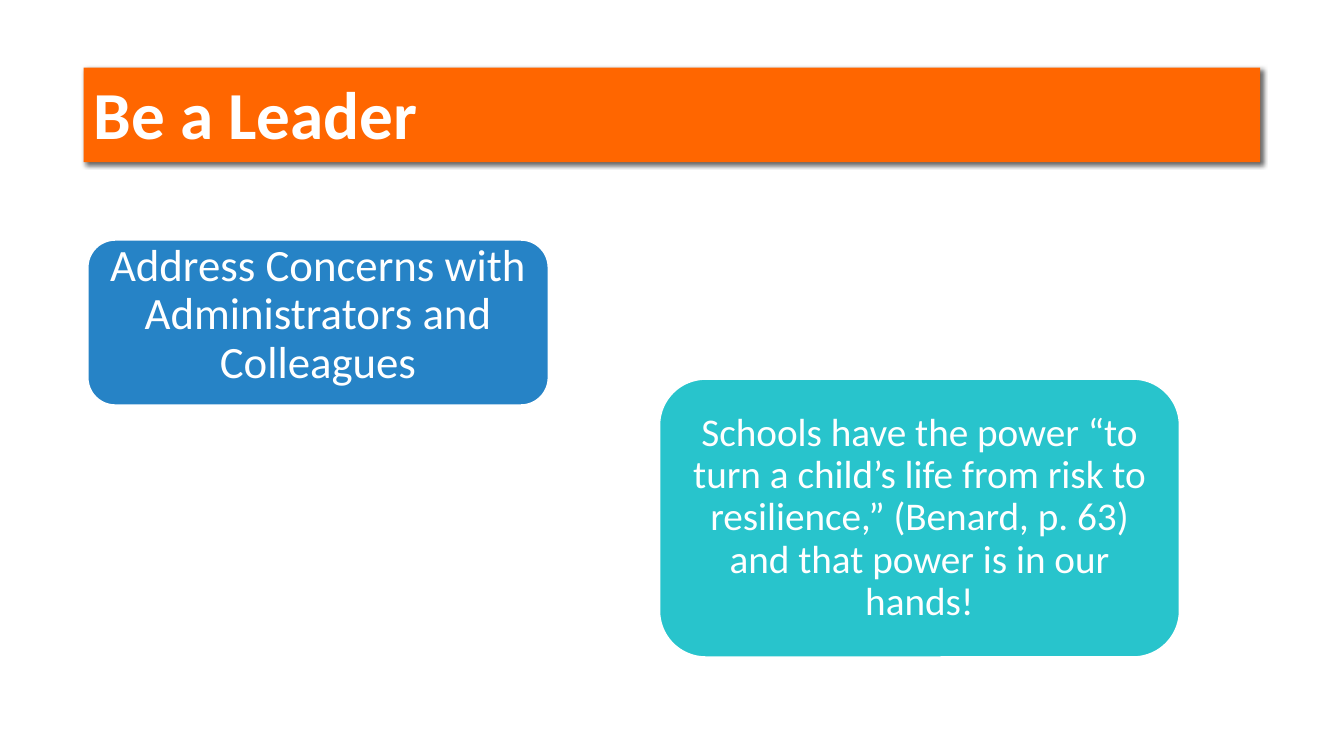
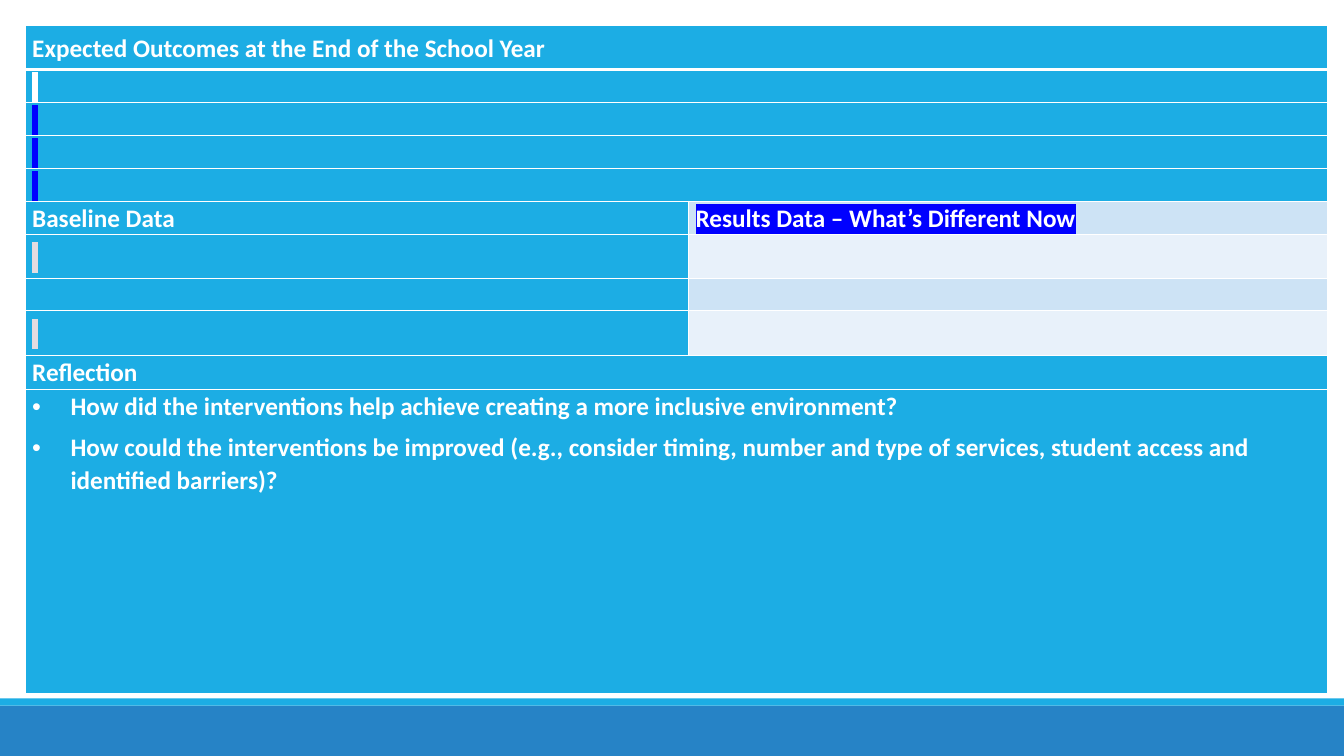
from lxml import etree
from pptx import Presentation
from pptx.dml.color import RGBColor
from pptx.enum.shapes import MSO_SHAPE
from pptx.enum.text import MSO_ANCHOR, PP_ALIGN
from pptx.oxml import parse_xml
from pptx.oxml.ns import qn
from pptx.util import Pt

RECT, ROUND = MSO_SHAPE.RECTANGLE, MSO_SHAPE.ROUNDED_RECTANGLE
LEFT, MID = PP_ALIGN.LEFT, PP_ALIGN.CENTER
TOP, MIDDLE = MSO_ANCHOR.TOP, MSO_ANCHOR.MIDDLE
PX = 9144
NS = 'xmlns:a="http://schemas.openxmlformats.org/drawingml/2006/main"'
HEX = {
    "white": "FFFFFF", "orange": "FF6600", "blue": "2683C6",
    "teal": "28C4CC", "sky": "1CADE4", "mark": "0000FF",
    "band": "CDE3F5", "pale": "E8F1FA", "grey": "E3DCE0",
}
SIDES = ("left", "top", "right", "bottom")


def block(slide, kind, box, fill):
    shape = slide.shapes.add_shape(kind, *[n * PX for n in box])
    shape.shadow.inherit = False
    shape.fill.solid()
    shape.fill.fore_color.rgb = RGBColor.from_string(HEX[fill])
    shape.line.fill.background()
    return shape


def write(para, text, size, bold, form, mark=None):
    for name, value in form.items():
        setattr(para, name, value)
    run = para.add_run()
    run.text = text
    for name, value in {"size": Pt(size), "bold": bold, "name": "Calibri"}.items():
        setattr(run.font, name, value)
    run.font.color.rgb = RGBColor.from_string(HEX["white"])
    if mark:
        tint = parse_xml(f'<a:highlight {NS}><a:srgbClr val="{HEX[mark]}"/></a:highlight>')
        run.font.fill._xPr.find(qn("a:solidFill")).addnext(tint)


deck = Presentation()
deck.slide_width, deck.slide_height = 1333 * PX, 750 * PX
blank = deck.slide_layouts[6]

slide = deck.slides.add_slide(blank)
title = block(slide, RECT, (83, 67, 1167, 94), "orange")
glow = title._element.spPr.find(qn("a:effectLst"))
glow.append(parse_xml(
    f'<a:outerShdw {NS} blurRad="44450" dist="25400" dir="2700000" algn="tl" rotWithShape="0">'
    '<a:srgbClr val="000000"><a:alpha val="60000"/></a:srgbClr></a:outerShdw>'))
title.text_frame.word_wrap = True
title.text_frame.vertical_anchor = TOP
write(title.text_frame.paragraphs[0], "Be a Leader", 48, True, {"alignment": LEFT})

cards = [
    ((87, 238, 457, 164), "blue", 32, (10, 0, 10, 14),
     "Address Concerns with Administrators and Colleagues"),
    ((654, 376, 516, 276), "teal", 28, (12, 6, 12, 6),
     "Schools have the power “to turn a child’s life from risk to resilience,” "
     "(Benard, p. 63) and that power is in our hands!"),
]
for box, fill, size, pads, text in cards:
    card = block(slide, ROUND, box, fill)
    card.line.color.rgb = RGBColor.from_string(HEX["white"])
    card.line.width = Pt(1.25)
    frame = card.text_frame
    frame.word_wrap = True
    frame.vertical_anchor = MIDDLE
    for side, pad in zip(SIDES, pads):
        setattr(frame, f"margin_{side}", pad * PX)
    write(frame.paragraphs[0], text, size, False, {"alignment": MID, "line_spacing": 0.9})

slide = deck.slides.add_slide(blank)
block(slide, RECT, (0, 700, 1333, 50), "blue")
block(slide, RECT, (0, 693, 1333, 7), "sky")

cols = (658, 634)
rows = (44, 32, 32, 32, 32, 32, 44, 32, 44, 34, 302)
split = range(5, 9)
texts = {
    (0, 0): ["Expected Outcomes at the End of the School Year"],
    (5, 0): ["Baseline Data"],
    (5, 1): ["Results Data – What’s Different Now"],
    (9, 0): ["Reflection"],
    (10, 0): [
        "How did the interventions help achieve creating a more inclusive environment?",
        "How could the interventions be improved (e.g., consider timing, number and type "
        "of services, student access and identified barriers)?",
    ],
}
marks = {(1, 0): "white", (2, 0): "mark", (3, 0): "mark", (4, 0): "mark",
         (5, 1): "mark", (6, 0): "grey", (8, 0): "grey"}

area = (25, 25, sum(cols), sum(rows))
table = slide.shapes.add_table(len(rows), len(cols), *[n * PX for n in area]).table
table.first_row = table.horz_banding = False
for col, wide in zip(table.columns, cols):
    col.width = wide * PX
for r, tall in enumerate(rows):
    table.rows[r].height = tall * PX
    for c in range(len(cols)):
        cell = table.cell(r, c)
        form = {"margin_left": 7 * PX, "margin_right": 7 * PX, "margin_top": 0,
                "margin_bottom": 0, "vertical_anchor": TOP if r == 10 else MIDDLE}
        for name, value in form.items():
            setattr(cell, name, value)
        props = cell._tc.get_or_add_tcPr()
        for edge in ("lnL", "lnR", "lnT", "lnB"):
            thick = 3 if (r, edge) in ((0, "lnB"), (1, "lnT")) else 1
            line = etree.SubElement(props, qn(f"a:{edge}"), w=str(Pt(thick)))
            paint = etree.SubElement(line, qn("a:solidFill"))
            etree.SubElement(paint, qn("a:srgbClr"), val=HEX["white"])
        cell.fill.solid()
        tone = "sky" if c == 0 or r not in split else ("band" if r % 2 else "pale")
        cell.fill.fore_color.rgb = RGBColor.from_string(HEX[tone])
        mark = marks.get((r, c))
        lines = texts.get((r, c), [" "] if mark else [])
        for i, text in enumerate(lines):
            para = cell.text_frame.paragraphs[0] if i == 0 else cell.text_frame.add_paragraph()
            form = {"line_spacing": 1.07}
            if r == 10:
                props = para._p.get_or_add_pPr()
                props.set("marL", str(38 * PX))
                props.set("indent", str(-38 * PX))
                etree.SubElement(props, qn("a:buFont"), typeface="Arial")
                etree.SubElement(props, qn("a:buChar"), char="•")
                if i:
                    form["space_before"] = Pt(6)
            write(para, text, 18, True, form, mark)
    if r not in split:
        table.cell(r, 0).merge(table.cell(r, 1))

deck.save("out.pptx")
